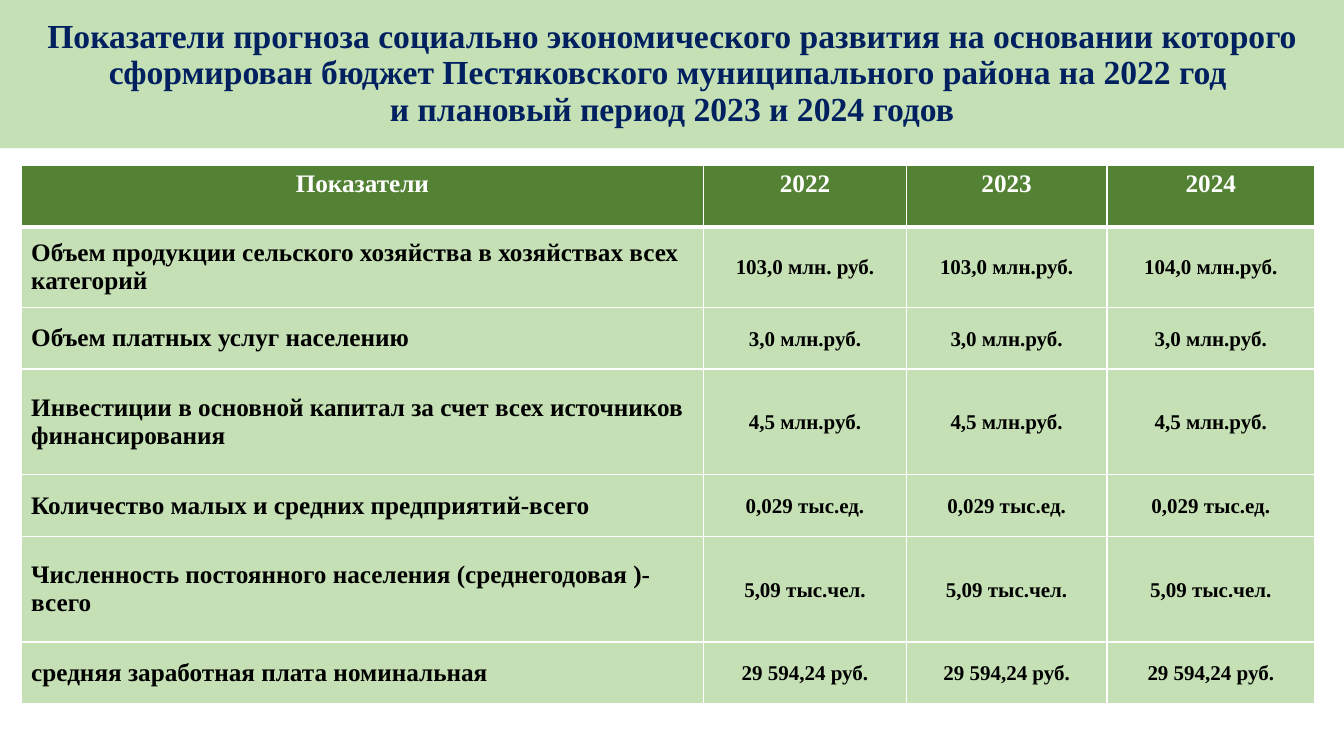
from lxml import etree
from pptx import Presentation
from pptx.dml.color import RGBColor
from pptx.enum.shapes import MSO_SHAPE
from pptx.enum.text import MSO_ANCHOR, PP_ALIGN
from pptx.oxml.ns import qn
from pptx.util import Inches, Pt

RECTANGLE = MSO_SHAPE.RECTANGLE
TOP, MIDDLE = MSO_ANCHOR.TOP, MSO_ANCHOR.MIDDLE
LEFT, CENTER = PP_ALIGN.LEFT, PP_ALIGN.CENTER

WHITE = RGBColor(0xFF, 0xFF, 0xFF)
BLACK = RGBColor(0x00, 0x00, 0x00)
NAVY = RGBColor(0x00, 0x20, 0x60)
PALE_GREEN = RGBColor(0xC5, 0xE0, 0xB4)
DARK_GREEN = RGBColor(0x54, 0x82, 0x35)

TITLE = (
    "Показатели прогноза социально экономического развития на основании которого "
    "сформирован бюджет Пестяковского муниципального района на 2022 год "
    "\vи плановый период 2023 и 2024 годов"
)
INDICATORS = [
    ("Показатели", "2022", "2023", "2024"),
    ("Объем продукции сельского хозяйства в хозяйствах всех категорий",
     "103,0 млн. руб.", "103,0 млн.руб.", "104,0 млн.руб."),
    ("Объем платных услуг населению", *["3,0 млн.руб."] * 3),
    ("Инвестиции в основной капитал за счет всех источников финансирования",
     *["4,5 млн.руб."] * 3),
    ("Количество малых и средних предприятий-всего", *["0,029 тыс.ед."] * 3),
    ("Численность постоянного населения (среднегодовая )-всего",
     *["5,09 тыс.чел."] * 3),
    ("средняя заработная плата номинальная", *["29 594,24 руб."] * 3),
]
COLUMN_WIDTHS = [6.77, 2.01, 1.99, 2.06]
ROW_HEIGHTS = [0.61, 0.8, 0.61, 1.05, 0.61, 1.05, 0.61]


class ForecastSlide:
    font_name = "Times New Roman"

    def __init__(self, presentation):
        self.slide = presentation.slides.add_slide(presentation.slide_layouts[6])

    def set_text(self, frame, text, size, color, align, spacing=None):
        frame.text = text
        paragraph = frame.paragraphs[0]
        paragraph.alignment = align
        if spacing:
            paragraph.line_spacing = spacing
        for run in paragraph.runs:
            run.font.name = self.font_name
            run.font.size = Pt(size)
            run.font.bold = True
            run.font.color.rgb = color

    def banner(self, text, left, top, width, height):
        banner = self.slide.shapes.add_shape(
            RECTANGLE, Inches(left), Inches(top), Inches(width), Inches(height))
        banner.shadow.inherit = False
        banner.fill.solid()
        banner.fill.fore_color.rgb = PALE_GREEN
        banner.line.fill.background()
        banner.text_frame.word_wrap = True
        banner.text_frame.vertical_anchor = MIDDLE
        self.set_text(banner.text_frame, text, 24, NAVY, CENTER, 0.9)

    def borders(self, cell, top, bottom):
        properties = cell._tc.get_or_add_tcPr()
        sides = [("a:lnL", 1), ("a:lnR", 1), ("a:lnT", top), ("a:lnB", bottom)]
        for position, (side, points) in enumerate(sides):
            line = etree.Element(qn(side), w=str(Pt(points)))
            fill = etree.SubElement(line, qn("a:solidFill"))
            etree.SubElement(fill, qn("a:srgbClr"), val=str(WHITE))
            properties.insert(position, line)

    def cell(self, cell, text, row, column):
        header = row == 0
        cell.fill.solid()
        cell.fill.fore_color.rgb = DARK_GREEN if header else PALE_GREEN
        cell.vertical_anchor = TOP if header else MIDDLE
        if header:
            self.set_text(cell.text_frame, text, 18, WHITE, CENTER)
        elif column == 0:
            self.set_text(cell.text_frame, text, 18, BLACK, LEFT)
        else:
            cell.margin_left = cell.margin_right = Inches(0.07)
            cell.margin_top = cell.margin_bottom = 0
            self.set_text(cell.text_frame, text, 15, BLACK, CENTER, 1.07)
        self.borders(cell, top=3 if row == 1 else 1, bottom=3 if header else 1)

    def table(self, rows, left, top, widths, heights):
        table = self.slide.shapes.add_table(
            len(rows), len(widths), Inches(left), Inches(top),
            Inches(sum(widths)), Inches(sum(heights))).table
        for column, width in zip(table.columns, widths):
            column.width = Inches(width)
        for r, (texts, height) in enumerate(zip(rows, heights)):
            table.rows[r].height = Inches(height)
            for c, text in enumerate(texts):
                self.cell(table.cell(r, c), text, r, c)


def main():
    presentation = Presentation()
    presentation.slide_width = Inches(13.33)
    presentation.slide_height = Inches(7.5)
    forecast = ForecastSlide(presentation)
    forecast.banner(TITLE, 0, 0, 13.33, 1.47)
    forecast.table(INDICATORS, 0.21, 1.64, COLUMN_WIDTHS, ROW_HEIGHTS)
    presentation.save("out.pptx")


if __name__ == "__main__":
    main()
